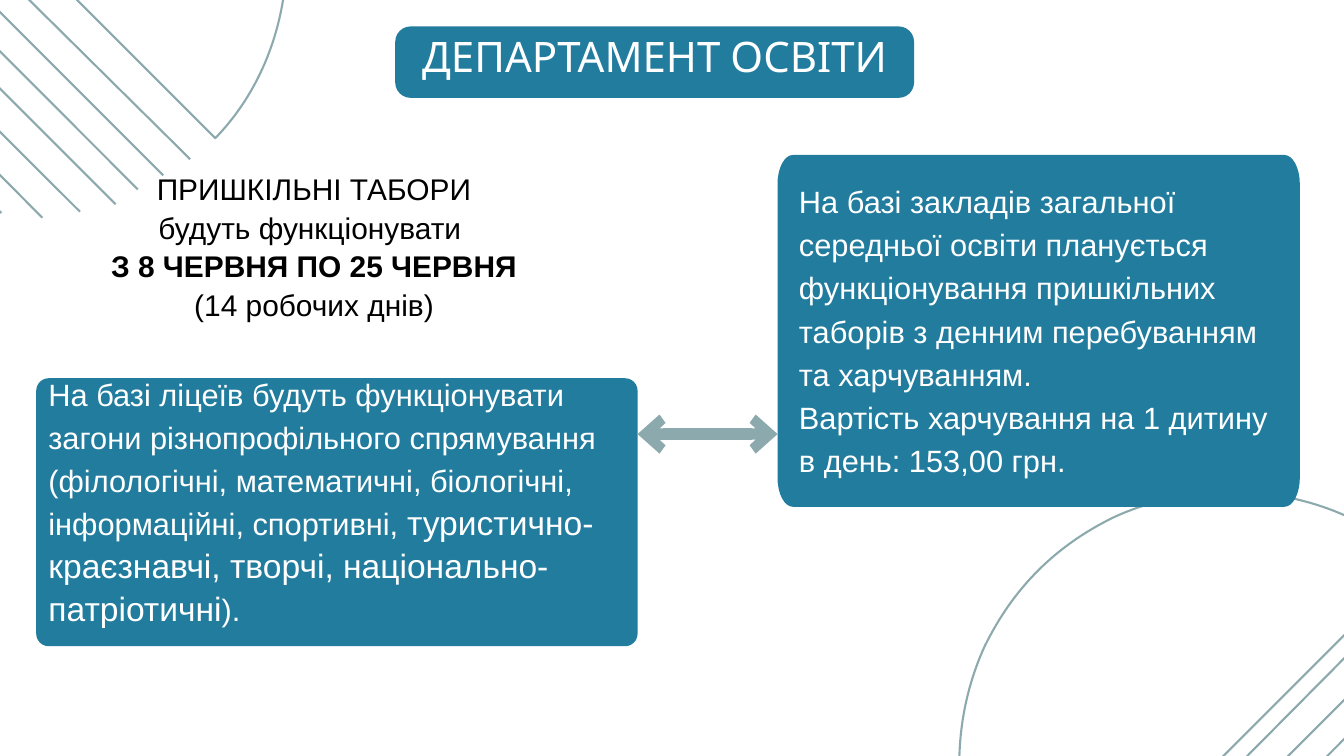
from dataclasses import dataclass
from typing import NamedTuple

from lxml.etree import Element, SubElement
from pptx import Presentation
from pptx.dml.color import RGBColor
from pptx.enum.shapes import MSO_CONNECTOR, MSO_SHAPE
from pptx.enum.text import MSO_ANCHOR, PP_ALIGN
from pptx.oxml.ns import qn
from pptx.util import Cm, Pt


@dataclass(frozen=True)
class Theme:
    panel: RGBColor = RGBColor(0x22, 0x7C, 0x9D)
    stroke: RGBColor = RGBColor(0x8C, 0xA9, 0xAD)
    light: RGBColor = RGBColor(0xFF, 0xFF, 0xFF)
    dark: RGBColor = RGBColor(0, 0, 0)
    title_font: str = "Karla"
    body_font: str = "Arial"
    title_size: int = 45
    body_size: int = 33
    accent_size: int = 36
    note_size: int = 32
    thin: float = 2.25
    thick: float = 12


THEME = Theme()


class Area(NamedTuple):
    """Left, top, width and height in centimetres."""
    left: float
    top: float
    width: float
    height: float

    def lengths(self) -> list[Cm]:
        return [Cm(value) for value in self]


class Span(NamedTuple):
    text: str
    size: int | None = None
    bold: bool | None = None


class Style(NamedTuple):
    font: str
    size: int
    color: RGBColor
    leading: float
    align: PP_ALIGN = PP_ALIGN.LEFT


class Panel(NamedTuple):
    area: Area
    corner_x: float
    corner_y: float
    text_area: Area
    style: Style
    paragraphs: list[list[Span]]


class Line(NamedTuple):
    x1: float
    y1: float
    x2: float
    y2: float


Point = tuple[float, float]


class Step(NamedTuple):
    """A move to the end point, bent by two handles when they are given."""
    end: Point
    handles: tuple[Point, ...] = ()


TITLE = Style(THEME.title_font, THEME.title_size, THEME.light, 63, PP_ALIGN.CENTER)
BODY = Style(THEME.body_font, THEME.body_size, THEME.light, 46.2)
NOTE = Style(THEME.body_font, THEME.note_size, THEME.dark, 41.4, PP_ALIGN.CENTER)

TITLE_PANEL = Panel(
    Area(14.94, 1, 19.61, 2.7), 0.58, 0.58, Area(14.94, 0.2, 19.61, 3.51), TITLE,
    [[Span("ДЕПАРТАМЕНТ ОСВІТИ")]])
SCHOOL_PANEL = Panel(
    Area(29.39, 5.86, 19.74, 13.3), 0.58, 1.09, Area(30.05, 5.62, 18.21, 13.54), BODY,
    [[Span("На базі закладів загальної середньої освіти планується функціонування "
           "пришкільних таборів з денним перебуванням та харчуванням.")],
     [Span("Вартість харчування на 1 дитину в день: 153,00 грн.")]])
LYCEUM_PANEL = Panel(
    Area(1.37, 14.3, 22.73, 10.13), 0.47, 0.47, Area(1.68, 13.28, 22.4, 11.15), BODY,
    [[Span("На базі ліцеїв будуть функціонувати загони різнопрофільного спрямування "
           "(філологічні, математичні, біологічні, інформаційні, спортивні, "),
      Span("туристично-краєзнавчі, творчі, національно-патріотичні", THEME.accent_size),
      Span(").")]])
DATES = [
    [Span("ПРИШКІЛЬНІ ТАБОРИ")],
    [Span("будуть функціонувати ")],
    [Span("З 8 ЧЕРВНЯ ПО 25 ЧЕРВНЯ ", bold=True), Span("(14 робочих днів)")],
]

RADIUS, RISE = 10.3, 9.91
# From the right end of the chord to the apex; the left half mirrors it.
HALF_ARC = [(RADIUS, 0), (10.24, 4.09), (7.34, 7.87), (3.43, 9.32),
            (2.3, 9.7), (1.19, RISE), (0, RISE)]
CORNER_BEND = 0.55

RIGHT_STRIPES = [
    Line(39.24, 36.55, 53.52, 22.15),
    Line(40.13, 37.13, 54.13, 23.14),
    Line(41.12, 37.64, 54.64, 24.1),
]
LEFT_STRIPES = [
    Line(-7.21, -8.23, 7.19, 6.02),
    Line(-7.82, -7.37, 6.17, 6.63),
    Line(-8.31, -6.38, 5.21, 7.16),
    Line(-8.66, -5.31, 4.37, 7.72),
    Line(-9.07, -4.06, 3.02, 8),
    Line(-9.4, -2.84, 1.6, 8.23),
    Line(-9.32, -1.27, 0.05, 8.05),
]


def add_outline(shapes, start: Point, steps: list[Step]):
    """Build a closed outline, then bend the steps that carry handles."""
    builder = shapes.build_freeform(Cm(start[0]), Cm(start[1]))
    builder.add_line_segments([(Cm(x), Cm(y)) for (x, y), _ in steps], close=True)
    shape = builder.convert_to_shape()
    shape.shadow.inherit = False
    for segment, step in zip(list(shape._element.iter(qn("a:lnTo"))), steps):
        if step.handles:
            segment.tag = qn("a:cubicBezTo")
        for index, (x, y) in enumerate(step.handles):
            segment.insert(index, Element(
                qn("a:pt"), x=str(Cm(x) - shape.left), y=str(Cm(y) - shape.top)))
    return shape


def add_half_disc(page, left: float, top: float, rotation: int) -> None:
    whole = HALF_ARC + [(-x, y) for x, y in HALF_ARC[-2::-1]]
    start, *points = [(left + RADIUS + x, top + RISE - y) for x, y in whole]
    steps = [Step(points[i + 2], (points[i], points[i + 1])) for i in range(0, len(points), 3)]
    shape = add_outline(page.shapes, start, steps)
    shape.rotation = rotation
    shape.fill.background()
    shape.line.color.rgb = THEME.stroke
    shape.line.width = Pt(THEME.thin)


def add_oval_cornered_box(shapes, area: Area, rx: float, ry: float):
    middle_x, middle_y = area.left + area.width / 2, area.top + area.height / 2
    half_x, half_y = area.width / 2, area.height / 2
    bend_x, bend_y = rx * (1 - CORNER_BEND), ry * (1 - CORNER_BEND)
    steps = []
    for sx, sy in [(1, -1), (1, 1), (-1, 1), (-1, -1)]:
        def place(inset_x: float, inset_y: float) -> Point:
            return middle_x + sx * (half_x - inset_x), middle_y + sy * (half_y - inset_y)

        flat, steep = place(rx, 0), place(0, ry)
        handles = place(bend_x, 0), place(0, bend_y)
        if sx == sy:
            flat, steep, handles = steep, flat, handles[::-1]
        steps += [Step(flat), Step(steep, handles)]
    return add_outline(shapes, steps[-1].end, steps)


def add_line(page, line: Line, width: float, arrows: bool = False) -> None:
    ends = [Cm(value) for value in line]
    connector = page.shapes.add_connector(MSO_CONNECTOR.STRAIGHT, *ends)
    connector.line.color.rgb = THEME.stroke
    connector.line.width = Pt(width)
    properties = connector._element.spPr
    if arrows:
        for end in ("a:headEnd", "a:tailEnd"):
            SubElement(properties.find(qn("a:ln")), qn(end), type="arrow", w="med", len="sm")
    SubElement(properties, qn("a:effectLst"))


def add_text(shapes, area: Area, style: Style, paragraphs: list[list[Span]]):
    frame = shapes.add_textbox(*area.lengths()).text_frame
    frame.word_wrap = True
    for index, spans in enumerate(paragraphs):
        para = frame.add_paragraph() if index else frame.paragraphs[0]
        para.alignment = style.align
        para.line_spacing = Pt(style.leading)
        para.font.name = style.font
        para.font.size = Pt(style.size)
        para.font.color.rgb = style.color
        for span in spans:
            run = para.add_run()
            run.text = span.text
            run.font.bold = span.bold
            if span.size:
                run.font.size = Pt(span.size)
    return frame


def add_panel(page, panel: Panel) -> None:
    """Group a filled rounded box with the text lying over it."""
    shapes = page.shapes.add_group_shape().shapes
    area, rx, ry = panel.area, panel.corner_x, panel.corner_y
    if rx == ry:
        box = shapes.add_shape(MSO_SHAPE.ROUNDED_RECTANGLE, *area.lengths())
        box.adjustments[0] = rx / min(area.width, area.height)
        box.shadow.inherit = False
    else:
        box = add_oval_cornered_box(shapes, area, rx, ry)
    box.fill.solid()
    box.fill.fore_color.rgb = THEME.panel
    box.line.fill.background()
    frame = add_text(shapes, panel.text_area, panel.style, panel.paragraphs)
    frame.vertical_anchor = MSO_ANCHOR.MIDDLE
    frame.margin_left = frame.margin_right = Cm(0.15)
    frame.margin_top = frame.margin_bottom = Cm(0.15)


def main() -> None:
    deck = Presentation()
    deck.slide_width, deck.slide_height = Cm(50.8), Cm(28.58)
    page = deck.slides.add_slide(deck.slide_layouts[6])
    add_panel(page, TITLE_PANEL)
    add_half_disc(page, 32.44, 20.12, 315)
    for stripe in RIGHT_STRIPES:
        add_line(page, stripe, THEME.thin)
    add_panel(page, SCHOOL_PANEL)
    add_half_disc(page, -5.94, -10.52, 45)
    for stripe in LEFT_STRIPES:
        add_line(page, stripe, THEME.thin)
    add_panel(page, LYCEUM_PANEL)
    add_line(page, Line(24.1, 16.41, 29.39, 16.41), THEME.thick, arrows=True)
    add_text(page.shapes, Area(3.52, 6.22, 16.71, 5.99), NOTE, DATES)
    deck.save("out.pptx")


if __name__ == "__main__":
    main()
